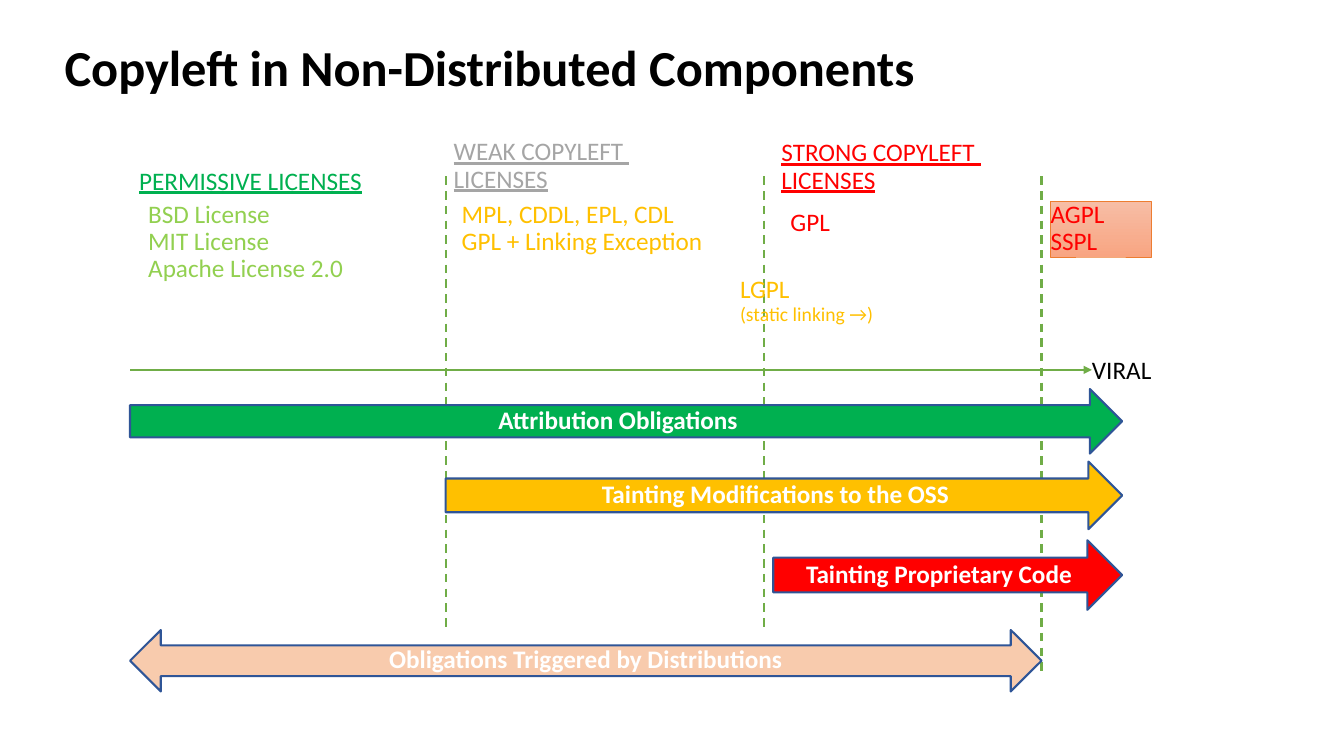
from lxml import etree
from pptx import Presentation, util as u
from pptx.dml.color import RGBColor
from pptx.enum import dml, shapes, text
from pptx.oxml.ns import qn

BLACK = RGBColor(0x00, 0x00, 0x00)
WHITE = RGBColor(0xFF, 0xFF, 0xFF)
GREEN = RGBColor(0x00, 0xB0, 0x50)
LIME = RGBColor(0x92, 0xD0, 0x50)
AXIS_GREEN = RGBColor(0x70, 0xAD, 0x47)
GRAY = RGBColor(0xA5, 0xA5, 0xA5)
AMBER = RGBColor(0xFF, 0xC0, 0x00)
RED = RGBColor(0xFF, 0x00, 0x00)
PEACH = RGBColor(0xF8, 0xCB, 0xAD)
NAVY = RGBColor(0x2F, 0x55, 0x97)
ORANGE = RGBColor(0xED, 0x7D, 0x31)
SALMON_TOP = RGBColor(0xF7, 0xBD, 0xA5)
SALMON_BOTTOM = RGBColor(0xF8, 0xA5, 0x82)

# Column edges of the license spectrum, in inches
PERMISSIVE, WEAK, STRONG, NETWORK = 1.29, 4.42, 7.58, 10.33
ARROW_TIP = 11.13
DIVIDER_TOP, AXIS_Y, LIST_TOP = 1.75, 3.67, 2


def write(shape, lines, color, size=18, bold=False, underline=False, align=None,
          spacing=0.9, anchor=text.MSO_ANCHOR.TOP, inset=None, wrap=False):
    """Fill a shape with one paragraph per line; a line may be (words, size)."""
    frame = shape.text_frame
    frame.word_wrap = wrap
    frame.vertical_anchor = anchor
    if inset is not None:
        frame.margin_left = frame.margin_right = u.Inches(inset)
        frame.margin_top = frame.margin_bottom = u.Inches(inset)
    for index, line in enumerate(lines):
        words, points = line if isinstance(line, tuple) else (line, size)
        para = frame.add_paragraph() if index else frame.paragraphs[0]
        para.alignment = align
        para.line_spacing = spacing
        span = para.add_run()
        span.text = words
        font = span.font
        font.name, font.size, font.bold = "Calibri", u.Pt(points), bold
        font.underline = underline
        font.color.rgb = color


def add_line(left, top, right, bottom):
    line = slide.shapes.add_connector(
        shapes.MSO_CONNECTOR.STRAIGHT, *map(u.Inches, (left, top, right, bottom)))
    line.line.color.rgb = AXIS_GREEN
    line.line.width = u.Pt(1.5)
    etree.SubElement(line._element.spPr, qn("a:effectLst"))
    return line


deck = Presentation()
deck.slide_width, deck.slide_height = u.Inches(13.33), u.Inches(7.5)
slide = deck.slides.add_slide(deck.slide_layouts[5])

title = slide.shapes.title
title.left, title.top, title.width, title.height = map(u.Inches, (0.54, 0.42, 12.79, 0.42))
write(title, ["Copyleft in Non-Distributed Components"], BLACK, size=36, bold=True,
      align=text.PP_ALIGN.LEFT, spacing=0.8, wrap=True)

# Dashed dividers and the axis
for edge, bottom in ((WEAK, 6.25), (STRONG, 6.25), (NETWORK, 6.67)):
    add_line(edge, DIVIDER_TOP, edge, bottom).line.dash_style = dml.MSO_LINE.DASH
axis = add_line(PERMISSIVE, AXIS_Y, 10.83, AXIS_Y)
etree.SubElement(axis.line._get_or_add_ln(), qn("a:tailEnd"), type="triangle")

# Obligation arrows
RIGHT, BOTH = shapes.MSO_SHAPE.RIGHT_ARROW, shapes.MSO_SHAPE.LEFT_RIGHT_ARROW
for kind, left, right, top, height, fill, label in (
    (RIGHT, PERMISSIVE, ARROW_TIP, 3.86, 0.64, GREEN, "Attribution Obligations"),
    (RIGHT, WEAK, ARROW_TIP, 4.58, 0.67, AMBER, "Tainting Modifications to the OSS"),
    (RIGHT, 7.67, ARROW_TIP, 5.36, 0.69, RED, "Tainting Proprietary Code"),
    (BOTH, PERMISSIVE, NETWORK, 6.25, 0.61, PEACH, "Obligations Triggered by Distributions"),
):
    arrow = slide.shapes.add_shape(kind, *map(u.Inches, (left, top, right - left, height)))
    arrow.shadow.inherit = False
    arrow.fill.solid()
    arrow.fill.fore_color.rgb = fill
    arrow.line.color.rgb = NAVY
    arrow.line.width = u.Pt(1.5)
    write(arrow, [label], WHITE, bold=True, align=text.PP_ALIGN.CENTER,
          anchor=text.MSO_ANCHOR.MIDDLE, wrap=True)

# License headings, lists and the axis label
for left, top, width, height, color, underline, lines in (
    (1.38, 1.67, 2.4, 0.33, GREEN, True, ["PERMISSIVE LICENSES"]),
    (1.47, LIST_TOP, 2.16, 1, LIME, False,
     ["BSD License", "MIT License", "Apache License 2.0"]),
    (4.5, 1.38, 2.1, 0.6, GRAY, True, ["WEAK COPYLEFT ", "LICENSES"]),
    (4.58, LIST_TOP, 2.6, 1, AMBER, False,
     ["MPL, CDDL, EPL, CDL", "GPL + Linking Exception"]),
    (7.75, 1.39, 2.1, 0.6, RED, True, ["STRONG COPYLEFT ", "LICENSES"]),
    (7.84, 2.08, 1, 0.25, RED, False, ["GPL"]),
    (7.34, 2.75, 1.5, 0.5, AMBER, False, ["LGPL", ("(static linking →)", 14)]),
    (10.83, 3.55, 0.75, 0.31, BLACK, False, ["VIRAL"]),
):
    box = slide.shapes.add_textbox(*map(u.Inches, (left, top, width, height)))
    write(box, lines, color, underline=underline, inset=0, wrap=True)

# Network copyleft box
network = slide.shapes.add_shape(
    shapes.MSO_SHAPE.RECTANGLE, *map(u.Inches, (10.42, LIST_TOP, 1, 0.55)))
network.shadow.inherit = False
network.fill.gradient()
network.fill.gradient_angle = 270
for stop, color in zip(network.fill.gradient_stops, (SALMON_TOP, SALMON_BOTTOM)):
    stop.color.rgb = color
network.line.color.rgb = ORANGE
network.line.width = u.Pt(0.5)
write(network, ["AGPL", "SSPL"], RED, align=text.PP_ALIGN.LEFT, inset=0)

deck.save("out.pptx")
